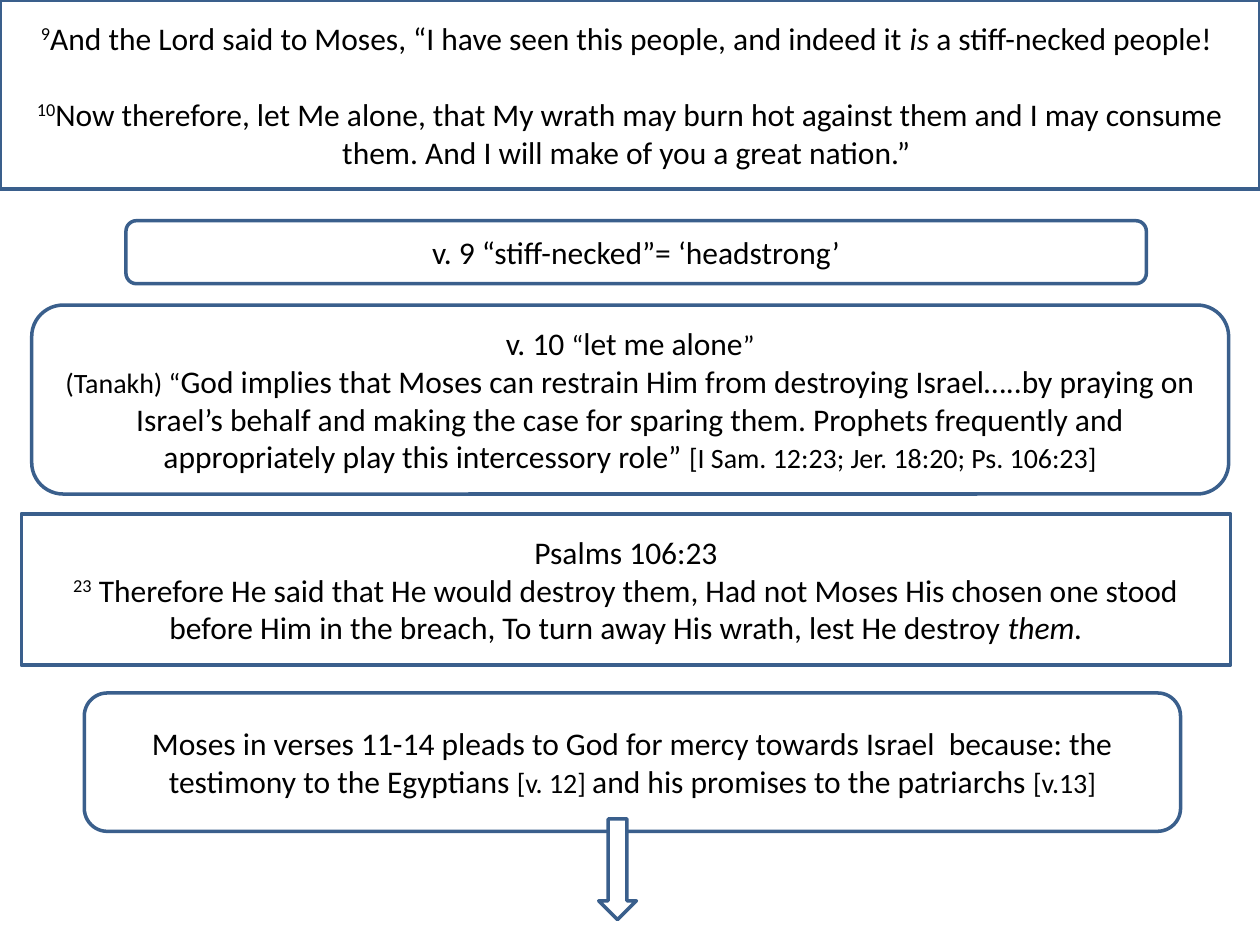
from pptx import Presentation
from pptx.dml.color import RGBColor
from pptx.enum.shapes import MSO_SHAPE
from pptx.enum.text import MSO_ANCHOR, PP_ALIGN
from pptx.util import Cm, Pt

COLORS = {"fill": "FFFFFF", "outline": "3A5F8C", "text": "000000"}
FONT = "Calibri"
BODY, SMALL = 18, 16
VERSE_GAP = 22

# Each paragraph is a list of (text, style) spans.
GOLDEN_CALF_VERSES = [
    [("9", "super"),
     ("And the Lord said to Moses, “I have seen this people, and indeed it ", "body"),
     ("is", "italic"),
     (" a stiff-necked people! ", "body")],
    [("10", "super"),
     ("Now therefore, let Me alone, that My wrath may burn hot against them "
      "and I may consume them. And I will make of you a great nation.” ", "body")],
]
STIFF_NECKED = [[("v. 9 “stiff-necked”= ‘headstrong’", "body")]]
LET_ME_ALONE = [
    [("v. 10 ", "body"), ("“", "small"), ("let me alone", "body"), ("”", "small")],
    [("(Tanakh) “", "small"),
     ("God implies that Moses can restrain Him from destroying Israel…..by praying "
      "on Israel’s behalf and making the case for sparing them. Prophets frequently "
      "and appropriately play this intercessory role” ", "body"),
     ("[I Sam. 12:23; Jer. 18:20; Ps. 106:23]", "small")],
]
PSALM = [
    [("Psalms 106:23", "body")],
    [("23", "super"),
     (" Therefore He said that He would destroy them, Had not Moses His chosen one "
      "stood before Him in the breach, To turn away His wrath, lest He destroy ", "body"),
     ("them.", "italic")],
]
PLEA = [
    [("Moses in verses 11-14 pleads to God for mercy towards Israel  because: "
      "the testimony to the Egyptians ", "body"),
     ("[v. 12] ", "small"),
     ("and his promises to the patriarchs ", "body"),
     ("[v.13]", "small")],
]


def add_outlined_shape(page, kind, left, top, width, height):
    shape = page.shapes.add_shape(kind, Cm(left), Cm(top), Cm(width), Cm(height))
    shape.shadow.inherit = False
    shape.fill.solid()
    shape.fill.fore_color.rgb = RGBColor.from_string(COLORS["fill"])
    shape.line.color.rgb = RGBColor.from_string(COLORS["outline"])
    shape.line.width = Pt(2)
    return shape


def add_span(para, text, style):
    span = para.add_run()
    span.text = text
    span.font.name = FONT
    span.font.size = Pt(SMALL if style == "small" else BODY)
    span.font.color.rgb = RGBColor.from_string(COLORS["text"])
    if style == "italic":
        span.font.italic = True
    elif style == "super":
        span._r.get_or_add_rPr().set("baseline", "30000")


def add_text_box(page, kind, position, paragraphs, gap=0):
    """Add an outlined box of centred text, with gap points between paragraphs."""
    box = add_outlined_shape(page, kind, *position)
    frame = box.text_frame
    frame.word_wrap = True
    frame.vertical_anchor = MSO_ANCHOR.MIDDLE
    for index, spans in enumerate(paragraphs):
        para = frame.add_paragraph() if index else frame.paragraphs[0]
        para.alignment = PP_ALIGN.CENTER
        if index and gap:
            para.space_before = Pt(gap)
        for text, style in spans:
            add_span(para, text, style)


def main():
    deck = Presentation()
    deck.slide_width, deck.slide_height = Cm(25.4), Cm(19.05)
    page = deck.slides.add_slide(deck.slide_layouts[6])

    square, rounded = MSO_SHAPE.RECTANGLE, MSO_SHAPE.ROUNDED_RECTANGLE
    add_text_box(page, square, (0, 0, 25.4, 3.81), GOLDEN_CALF_VERSES, VERSE_GAP)
    add_text_box(page, rounded, (2.54, 4.45, 20.57, 1.27), STIFF_NECKED)
    add_text_box(page, rounded, (0.64, 6.15, 24.13, 3.81), LET_ME_ALONE)
    add_text_box(page, square, (0.43, 10.36, 24.38, 3.05), PSALM)
    add_text_box(page, rounded, (1.7, 13.97, 22.1, 2.79), PLEA)
    add_outlined_shape(page, MSO_SHAPE.DOWN_ARROW, 12.07, 16.51, 0.76, 2.03)

    deck.save("out.pptx")


if __name__ == "__main__":
    main()
